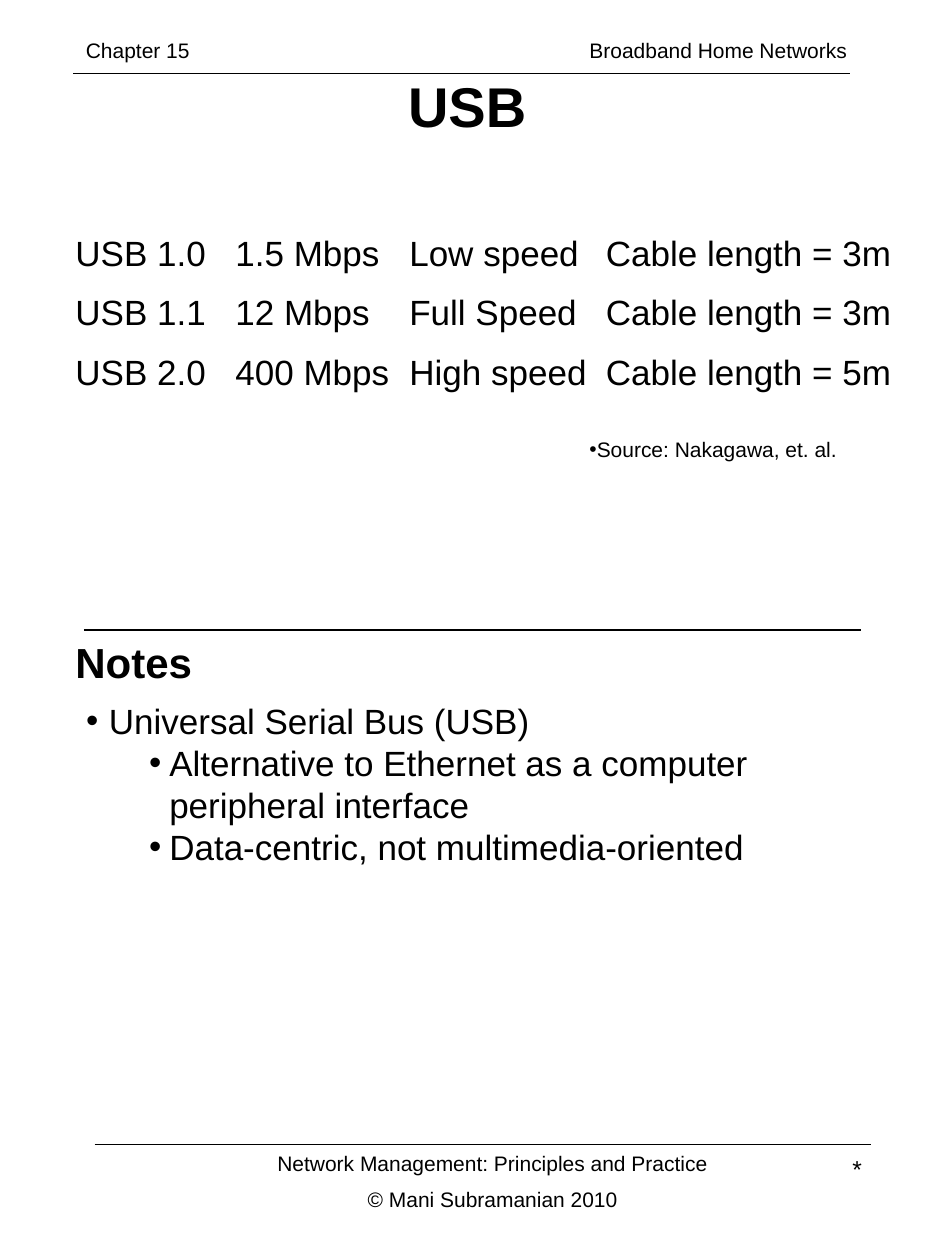
from lxml.etree import SubElement as Sub
from pptx import Presentation
from pptx.dml.color import RGBColor as RGB
from pptx.enum.shapes import MSO_CONNECTOR as Conn
from pptx.enum.text import MSO_ANCHOR as Anchor, MSO_AUTO_SIZE as Fit, PP_ALIGN as Align
from pptx.oxml.ns import qn
from pptx.util import Inches, Pt

# Content
HEAD = ["Chapter 15", "Broadband Home Networks"]
TITLE = ["USB"]
SPEEDS = [
    ("USB 1.0", "1.5 Mbps", "Low speed", "Cable length = 3m"),
    ("USB 1.1", "12 Mbps", "Full Speed", "Cable length = 3m"),
    ("USB 2.0", "400 Mbps", "High speed", "Cable length = 5m"),
]
SOURCE = ["Source: Nakagawa, et. al."]
NOTES = [
    (0, "Universal Serial Bus (USB)"),
    (1, "Alternative to Ethernet as a computer peripheral interface"),
    (1, "Data-centric, not multimedia-oriented"),
]
FOOT = ["Network Management: Principles and Practice", "© Mani Subramanian 2010"]

# Look and layout, in inches and points
WIDE, HIGH = 7.5, 10
UNIT = 1 / 12
HEX = {"ink": "000000", "page": "FFFFFF"}
FONT = "Arial"
COLS = [(0.5, 1.3), (1.77, 1.5), (3.15, 1.65), (4.71, 2.6)]
HEADS = [(7 * UNIT, 2), (4.58, 2.3)]
RULE = 74 * UNIT
RULES = [(7 * UNIT, 7 * UNIT), (8 * UNIT, HIGH / 2), (9 * UNIT, 109 * UNIT)]
LEVELS = [
    {"left": 0.18, "first": -0.18, "bullet": True},
    {"left": 0.66, "first": -0.16, "bullet": True},
]

deck = Presentation()
deck.slide_width, deck.slide_height = Inches(WIDE), Inches(HIGH)
slide = deck.slides.add_slide(deck.slide_layouts[1])
slide.background.fill.solid()
slide.background.fill.fore_color.rgb = RGB.from_string(HEX["page"])


def place(box, at, anchor=Anchor.TOP):
    """Set the box's place and frame."""
    for name, val in zip(("left", "top", "width", "height"), at):
        setattr(box, name, Inches(val))
    look = {"word_wrap": True, "auto_size": Fit.NONE, "vertical_anchor": anchor}
    for name, val in look.items():
        setattr(box.text_frame, name, val)
    return box.text_frame


def text_box(at, anchor=Anchor.TOP):
    spot = [Inches(val) for val in at]
    return place(slide.shapes.add_textbox(*spot), at, anchor)


def write(para, text, size, bold=False, align=Align.LEFT, gap=0,
          left=0, first=0, bullet=False):
    """Fill one paragraph."""
    for name, val in {"alignment": align, "space_before": Pt(gap)}.items():
        setattr(para, name, val)
    run = para.add_run()
    run.text = text
    for name, val in {"size": Pt(size), "bold": bold, "name": FONT}.items():
        setattr(run.font, name, val)
    run.font.color.rgb = RGB.from_string(HEX["ink"])

    # Indent and bullet
    prop = para._p.get_or_add_pPr()
    prop.set("marL", str(Inches(left)))
    prop.set("indent", str(Inches(first)))
    if bullet:
        tint = Sub(prop, qn("a:buClr"))
        Sub(tint, qn("a:srgbClr"), val=HEX["ink"])
        Sub(prop, qn("a:buFont"), typeface=FONT)
        Sub(prop, qn("a:buChar"), char="•")


def fill(frame, lines, size, gap=0, **look):
    """Write all lines, with a gap between them."""
    for row, line in enumerate(lines):
        para = frame.add_paragraph() if row else frame.paragraphs[0]
        write(para, line, size, gap=gap if row else 0, **look)


# Rules
for left, top in RULES:
    ends = [Inches(val) for val in (left, top, left + RULE, top)]
    rule = slide.shapes.add_connector(Conn.STRAIGHT, *ends)
    rule.line.width = Pt(1)
    rule.line.color.rgb = RGB.from_string(HEX["ink"])
    Sub(rule._element.spPr, qn("a:effectLst"))

# Header and title
for (left, width), line in zip(HEADS, HEAD):
    fill(text_box((left, 0.25, width, 0.3)), [line], 12)
fill(place(slide.shapes.title, (7 * UNIT, 7 * UNIT, 6.25, 0.5), Anchor.MIDDLE),
     TITLE, 32, bold=True, align=Align.CENTER)

# Speeds, one box a column, and their source
for (left, width), column in zip(COLS, zip(*SPEEDS)):
    fill(text_box((left, 1.75, width, 1.45), Anchor.MIDDLE), column, 20, gap=10)
fill(text_box((4.58, 41 * UNIT, 2.18, 0.3)), SOURCE, 12, bullet=True)

# Notes
fill(text_box((0, HIGH / 2, 1.67, 0.5)), ["Notes"], 24, bold=True, left=0.5)
body = place(slide.placeholders[1], (7 * UNIT, 5.5, 6.33, 1.45))
for row, (level, line) in enumerate(NOTES):
    para = body.add_paragraph() if row else body.paragraphs[0]
    para.level = level
    write(para, line, 20, **LEVELS[level])

# Footer
fill(text_box((2, 109 * UNIT, 3.82, 0.61)), FOOT, 12, gap=6, align=Align.CENTER)
fill(text_box((5.38, 9.11, 1.56, 0.67)), ["*"], 14, align=Align.RIGHT)

deck.save("out.pptx")
